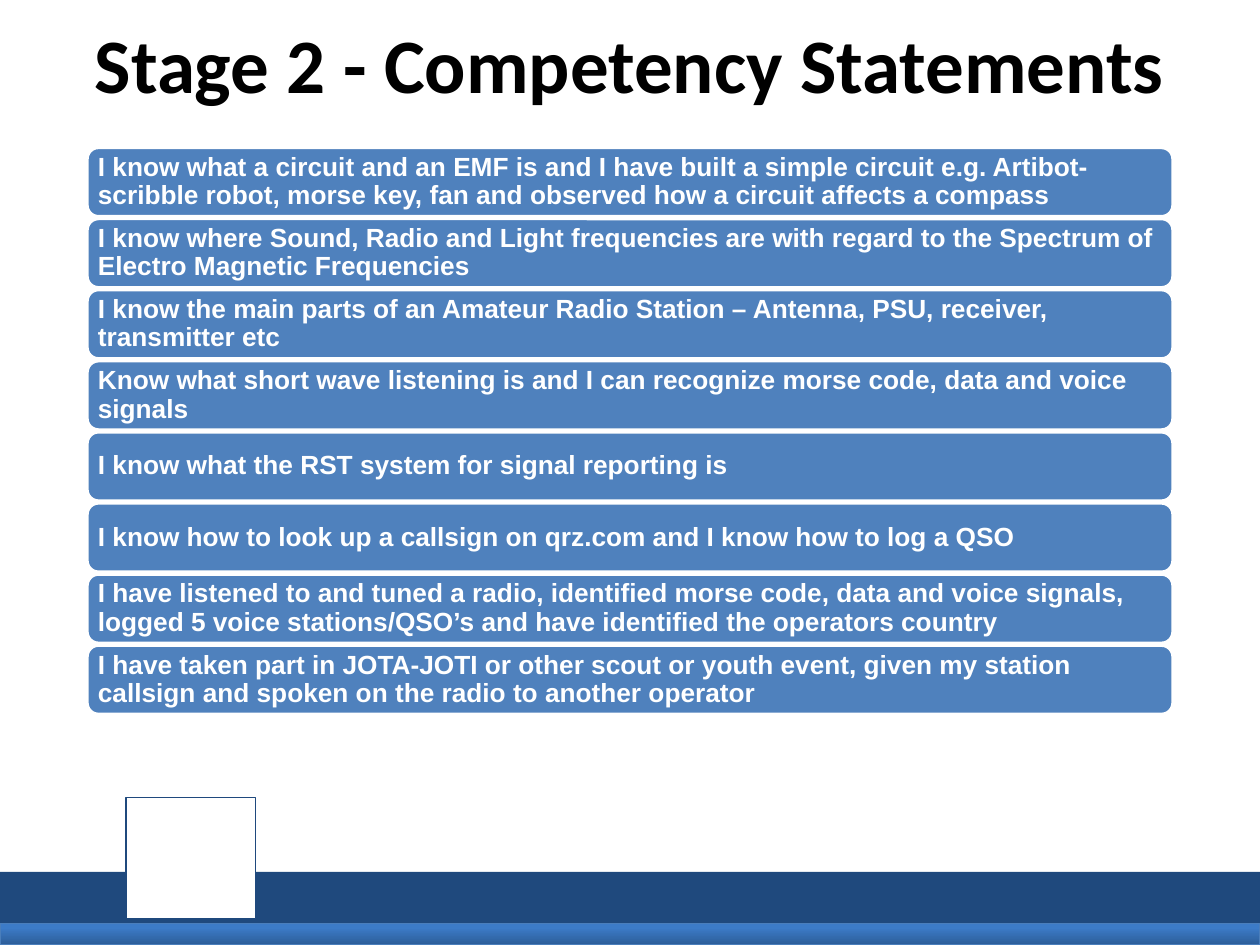
"""Build the Stage 2 competency statements slide."""
from pptx import Presentation
from pptx.dml.color import RGBColor
from pptx.enum.shapes import MSO_SHAPE as SHAPE
from pptx.enum.text import MSO_ANCHOR as ANCHOR, PP_ALIGN as ALIGN
from pptx.util import Inches, Pt

COLORS = {
    "black": "000000", "white": "FFFFFF", "navy": "1F497D", "bar": "4F81BD",
    "edge": "4A7EBB", "strip_top": "3C7BC7", "strip_bottom": "2C5D98",
}
STATEMENTS = [
    "I know what a circuit and an EMF is and I have built a simple circuit e.g. "
    "Artibot-scribble robot, morse key, fan and observed how a circuit affects a compass",
    "I know where Sound, Radio and Light frequencies are with regard to the Spectrum "
    "of Electro Magnetic Frequencies",
    "I know the main parts of an Amateur Radio Station – Antenna, PSU, receiver, "
    "transmitter etc",
    "Know what short wave listening is and I can recognize morse code, data and voice signals",
    "I know what the RST system for signal reporting is",
    "I know how to look up a callsign on qrz.com and I know how to log a QSO",
    "I have listened to and tuned a radio, identified morse code, data and voice signals, "
    "logged 5 voice stations/QSO’s and have identified the operators country",
    "I have taken part in JOTA-JOTI or other scout or youth event, given my station "
    "callsign and spoken on the radio to another operator",
]


def add_box(kind, left, top, width, height, fill, line=None, weight=0.75):
    sp = s.shapes.add_shape(kind, Inches(left), Inches(top), Inches(width), Inches(height))
    sp.shadow.inherit = False
    sp.fill.solid()
    sp.fill.fore_color.rgb = RGBColor.from_string(COLORS[fill])
    if line:
        sp.line.color.rgb = RGBColor.from_string(COLORS[line])
        sp.line.width = Pt(weight)
    else:
        sp.line.fill.background()
    return sp


def write(sp, text, font, size, color, align, spacing=None, inset=(0.1, 0.05)):
    tf = sp.text_frame
    tf.word_wrap = True
    tf.vertical_anchor = ANCHOR.MIDDLE
    tf.margin_left = tf.margin_right = Inches(inset[0])
    tf.margin_top = tf.margin_bottom = Inches(inset[1])
    p = tf.paragraphs[0]
    p.alignment = align
    p.line_spacing = spacing
    r = p.add_run()
    r.text = text
    r.font.name = font
    r.font.size = Pt(size)
    r.font.bold = True
    r.font.color.rgb = RGBColor.from_string(COLORS[color])


prs = Presentation()
prs.slide_width, prs.slide_height = Inches(10), Inches(7.5)
s = prs.slides.add_slide(prs.slide_layouts[5])

add_box(SHAPE.RECTANGLE, 0, 6.92, 10, 0.42, "navy")
strip = add_box(SHAPE.RECTANGLE, 0, 7.33, 10, 0.17, "strip_top", "edge")
strip.fill.gradient()
strip.fill.gradient_angle = 270
for stop, position, color in zip(strip.fill.gradient_stops, (0.2, 1), ("strip_top", "strip_bottom")):
    stop.position = position
    stop.color.rgb = RGBColor.from_string(COLORS[color])
add_box(SHAPE.RECTANGLE, 1, 6.33, 1.03, 0.96, "white", "navy")

title = s.shapes.title
title.left, title.top, title.width, title.height = 0, 0, prs.slide_width, Inches(1)
write(title, "Stage 2 - Competency Statements", "Calibri", 44, "black", ALIGN.CENTER)

first_top, last_top = 1.17, 5.12
pitch = (last_top - first_top) / (len(STATEMENTS) - 1)
for i, statement in enumerate(STATEMENTS):
    bar = add_box(SHAPE.ROUNDED_RECTANGLE, 0.69, first_top + i * pitch, 8.62, 0.55,
                  "bar", "white", 2)
    write(bar, statement, "Arial", 15, "white", ALIGN.LEFT, spacing=0.9, inset=(0.06, 0.06))

prs.save("out.pptx")
